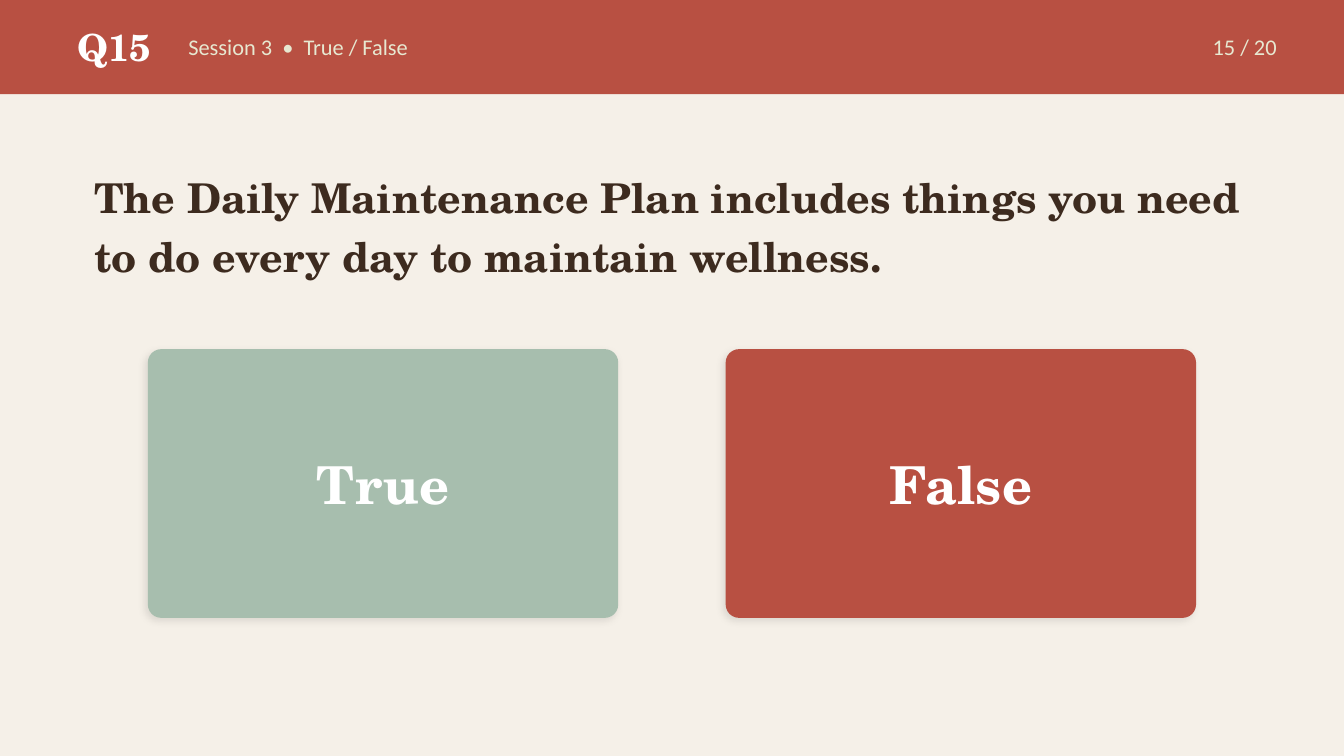
from lxml.etree import SubElement
from pptx import Presentation
from pptx.dml.color import RGBColor
from pptx.enum.shapes import MSO_SHAPE
from pptx.enum.text import MSO_ANCHOR, MSO_AUTO_SIZE, PP_ALIGN
from pptx.oxml.ns import qn
from pptx.util import Cm, Pt

CREAM = RGBColor(0xF5, 0xF0, 0xE8)
RUST = RGBColor(0xB8, 0x50, 0x42)
SAGE = RGBColor(0xA7, 0xBE, 0xAE)
SAND = RGBColor(0xE7, 0xE8, 0xD1)
BROWN = RGBColor(0x3D, 0x2B, 0x1F)
WHITE = RGBColor(0xFF, 0xFF, 0xFF)
SERIF, SANS = "TeX Gyre Schola", "Calibri"

QUESTION = "The Daily Maintenance Plan includes things you need to do every day to maintain wellness."
ANSWERS = [("True", SAGE), ("False", RUST)]
SERIF_BOLD = {"font": SERIF, "color": WHITE, "bold": True, "align": PP_ALIGN.CENTER}
SMALL = {"font": SANS, "size": 12, "color": SAND}
# text, left and width in cm, format
HEADER = [
    ("Q15", 1.27, 1.78, {**SERIF_BOLD, "size": 20}),
    ("Session 3  •  True / False", 3.56, 12.7, SMALL),
    ("15 / 20", 20.32, 3.81, {**SMALL, "align": PP_ALIGN.RIGHT}),
]

PAGE_WIDTH, PAGE_HEIGHT = 25.4, 14.29
BAR_HEIGHT = 1.78
LABEL_TOP, LABEL_HEIGHT = 0.2, 1.37
CARD_TOP, CARD_WIDTH, CARD_HEIGHT, CARD_GAP = 6.6, 8.89, 5.08, 2.03


def write(shape, text, *, font, size, color, bold=False, align=PP_ALIGN.LEFT, line_spacing=None):
    frame = shape.text_frame
    frame.auto_size = MSO_AUTO_SIZE.NONE
    frame.word_wrap = True
    frame.vertical_anchor = MSO_ANCHOR.MIDDLE
    frame.margin_left = frame.margin_right = frame.margin_top = frame.margin_bottom = 0
    para = frame.paragraphs[0]
    para.alignment = align
    para.line_spacing = line_spacing
    span = para.add_run()
    span.text = text
    span.font.name = font
    span.font.size = Pt(size)
    span.font.bold = bold
    span.font.color.rgb = color


def add_block(page, kind, left, top, width, height, fill):
    block = page.shapes.add_shape(kind, Cm(left), Cm(top), Cm(width), Cm(height))
    block.shadow.inherit = False
    block.fill.solid()
    block.fill.fore_color.rgb = fill
    block.line.fill.background()
    return block


def add_soft_shadow(shape):
    effects = shape._element.spPr.find(qn("a:effectLst"))
    shadow = SubElement(effects, qn("a:outerShdw"), blurRad=str(Pt(4)), dist=str(Pt(2)),
                        dir=str(135 * 60000), algn="bl", rotWithShape="0")
    color = SubElement(shadow, qn("a:srgbClr"), val="000000")
    SubElement(color, qn("a:alpha"), val="10000")


def main():
    deck = Presentation()
    deck.slide_width, deck.slide_height = Cm(PAGE_WIDTH), Cm(PAGE_HEIGHT)
    page = deck.slides.add_slide(deck.slide_layouts[5])
    page.background.fill.solid()
    page.background.fill.fore_color.rgb = CREAM

    add_block(page, MSO_SHAPE.RECTANGLE, 0, 0, PAGE_WIDTH, BAR_HEIGHT, RUST)
    for text, left, width, style in HEADER:
        box = page.shapes.add_textbox(Cm(left), Cm(LABEL_TOP), Cm(width), Cm(LABEL_HEIGHT))
        write(box, text, **style)

    title = page.shapes.title
    title.left, title.top, title.width, title.height = Cm(1.78), Cm(2.79), Cm(21.84), Cm(2.79)
    write(title, QUESTION, font=SERIF, size=22, color=BROWN, bold=True, line_spacing=1.2)

    cards_width = len(ANSWERS) * (CARD_WIDTH + CARD_GAP) - CARD_GAP
    first_left = (PAGE_WIDTH - cards_width) / 2
    for index, (answer, fill) in enumerate(ANSWERS):
        left = first_left + index * (CARD_WIDTH + CARD_GAP)
        card = add_block(page, MSO_SHAPE.ROUNDED_RECTANGLE, left, CARD_TOP,
                         CARD_WIDTH, CARD_HEIGHT, fill)
        card.adjustments[0] = 0.05
        add_soft_shadow(card)
        write(card, answer, **SERIF_BOLD, size=28)

    deck.save("out.pptx")


if __name__ == "__main__":
    main()
